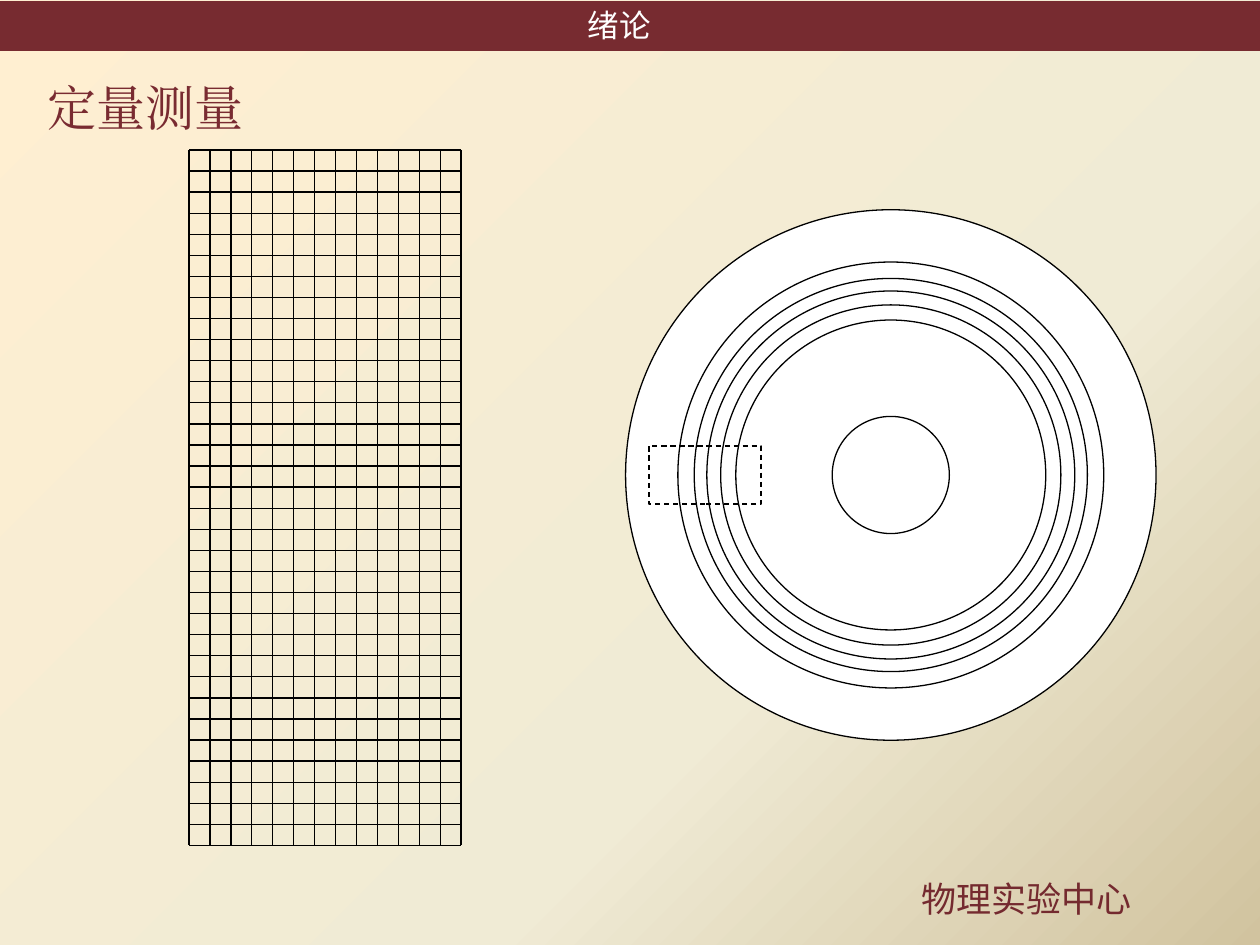
from dataclasses import dataclass

from lxml import etree
from pptx import Presentation
from pptx.dml.color import RGBColor
from pptx.enum import dml, shapes, text
from pptx.oxml import ns
from pptx.util import Inches, Pt


@dataclass(frozen=True)
class Theme:
    band: str = "772B30"
    title: str = "792B31"
    footer: str = "742A2F"
    white: str = "FFFFFF"
    ink: str = "000000"
    background: tuple = ((0, "FFEFD1"), (65, "F0EBD5"), (100, "D1C39F"))
    title_size: int = 28
    footer_size: int = 20
    header_size: int = 18
    line_width: float = 0.75
    title_font: str = "Times New Roman"
    text_font: str = "Noto Sans CJK SC"


def add_element(parent, tag, **attributes):
    return etree.SubElement(parent, ns.qn(tag), attributes)


class SlideBuilder:
    def __init__(self, page, theme):
        self.page = page
        self.theme = theme

    def background(self):
        fill = self.page.background.fill
        fill.gradient()
        fill.gradient_angle = 315
        stops = self.page.element.find(".//" + ns.qn("a:gsLst"))
        for stop in list(stops):
            stops.remove(stop)
        for percent, color in self.theme.background:
            stop = add_element(stops, "a:gs", pos=str(percent * 1000))
            add_element(stop, "a:srgbClr", val=color)

    def outline(self, line, color=None):
        line.color.rgb = RGBColor.from_string(color or self.theme.ink)
        line.width = Pt(self.theme.line_width)

    def shape(self, parent, kind, left, top, width, height, fill=None, line=None):
        shape = parent.shapes.add_shape(
            kind, Inches(left), Inches(top), Inches(width), Inches(height))
        shape.shadow.inherit = False
        if fill:
            shape.fill.solid()
            shape.fill.fore_color.rgb = RGBColor.from_string(fill)
        else:
            shape.fill.background()
        self.outline(shape.line, line)
        return shape

    def circle(self, parent, center_x, center_y, diameter):
        self.shape(parent, shapes.MSO_SHAPE.OVAL, center_x - diameter / 2,
                   center_y - diameter / 2, diameter, diameter, self.theme.white)

    def line(self, parent, x1, y1, x2, y2):
        line = parent.shapes.add_connector(
            shapes.MSO_CONNECTOR.STRAIGHT,
            Inches(x1), Inches(y1), Inches(x2), Inches(y2))
        self.outline(line.line)
        add_element(line.element.spPr, "a:effectLst")

    def grid(self, left, top, right, bottom, columns, rows):
        group = self.page.shapes.add_group_shape()
        for column in range(columns + 1):
            x = left + (right - left) * column / columns
            self.line(group, x, top, x, bottom)
        for row in range(rows + 1):
            y = top + (bottom - top) * row / rows
            self.line(group, left, y, right, y)

    def set_text(self, box, words, font, size, color, align, wrap=True):
        frame = box.text_frame
        frame.word_wrap = wrap
        frame.auto_size = text.MSO_AUTO_SIZE.NONE
        frame.vertical_anchor = text.MSO_ANCHOR.MIDDLE
        para = frame.paragraphs[0]
        para.text = words
        para.alignment = align
        para.font.name = font
        para.font.size = Pt(size)
        para.font.color.rgb = RGBColor.from_string(color)
        add_element(para._p.get_or_add_pPr().get_or_add_defRPr(), "a:ea", typeface=font)

    def title(self, words, left, top, width, height):
        box = self.page.shapes.title
        box.left, box.top = Inches(left), Inches(top)
        box.width, box.height = Inches(width), Inches(height)
        self.set_text(box, words, self.theme.title_font, self.theme.title_size,
                      self.theme.title, text.PP_ALIGN.LEFT, wrap=False)

    def label(self, words, left, top, width, height, size, color):
        box = self.page.shapes.add_textbox(
            Inches(left), Inches(top), Inches(width), Inches(height))
        self.set_text(box, words, self.theme.text_font, size, color,
                      text.PP_ALIGN.CENTER)


def main():
    deck = Presentation()
    deck.slide_width, deck.slide_height = Inches(10), Inches(7.5)
    theme = Theme()
    page = deck.slides.add_slide(deck.slide_layouts[5])
    builder = SlideBuilder(page, theme)

    builder.background()
    builder.shape(page, shapes.MSO_SHAPE.RECTANGLE, 0, 0.01, 10, 0.39,
                  theme.band, theme.band)
    builder.label("物理实验中心", 7.19, 6.91, 1.92, 0.44, theme.footer_size, theme.footer)
    builder.label("绪论", 3.98, 0, 1.87, 0.4, theme.header_size, theme.white)
    builder.title("定量测量", 0.28, 0.56, 1.77, 0.57)

    rings = page.shapes.add_group_shape()
    for diameter in (4.21, 3.38, 3.12, 2.92, 2.7, 2.46, 0.93):
        builder.circle(rings, 7.07, 3.77, diameter)
    window = builder.shape(rings, shapes.MSO_SHAPE.RECTANGLE, 5.15, 3.54, 0.89, 0.46)
    window.line.dash_style = dml.MSO_LINE.DASH

    builder.grid(1.5, 1.19, 3.66, 6.71, columns=13, rows=33)
    deck.save("out.pptx")


if __name__ == "__main__":
    main()
